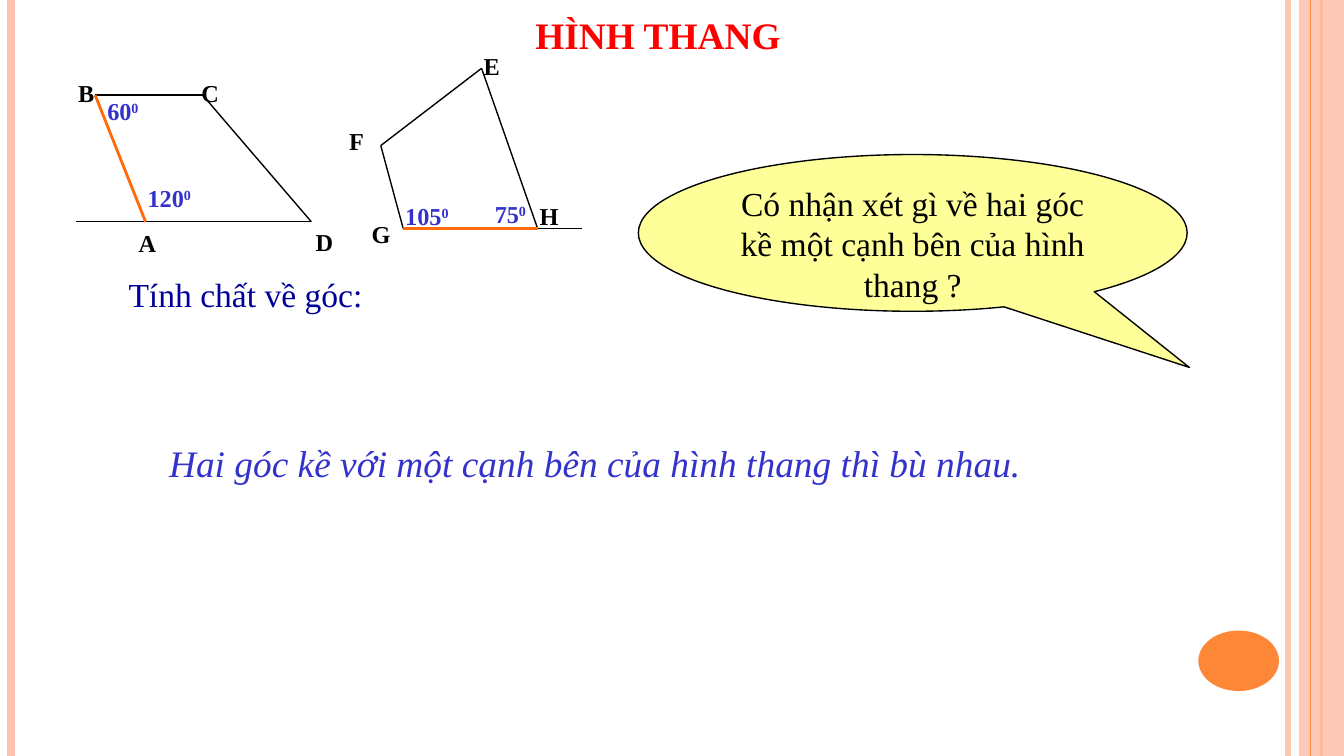
import pptx
import pptx.dml.color
import pptx.enum.shapes
import pptx.enum.text
import pptx.oxml.ns
import pptx.util
import lxml.etree

THEME = {
    "font": "Times New Roman",
    "black": "000000", "red": "FF0000", "blue": "3333CC", "navy": "000099",
    "peach": "FEC3AE", "orange": "FE8637", "side": "FF6B0A", "cream": "FFFF99",
    "label": 13, "body": 18, "head": 20,
    "thin": 0.75, "bold": 1.5,
}

deck = pptx.Presentation()
deck.slide_width = pptx.util.Inches(10)
deck.slide_height = pptx.util.Inches(5.625)
slide = deck.slides.add_slide(deck.slide_layouts[5])
shapes = slide.shapes
kinds = pptx.enum.shapes.MSO_SHAPE
aligns = pptx.enum.text.PP_ALIGN
color = pptx.dml.color.RGBColor.from_string
name = pptx.oxml.ns.qn

unit = deck.slide_width / 120
wide = 120
high = deck.slide_height / unit


def line(start, end, tint="black", width=THEME["thin"]):
    ends = [round(n * unit) for n in (*start, *end)]
    edge = shapes.add_connector(pptx.enum.shapes.MSO_CONNECTOR.STRAIGHT, *ends)
    edge.line.color.rgb = color(THEME[tint])
    edge.line.width = pptx.util.Pt(width)
    lxml.etree.SubElement(edge._element.spPr, name("a:effectLst"))
    return edge


def text(words, box, shape=None, size="label", tint="black", bold=False,
         slant=False, power="", align=aligns.LEFT, wrap=True, left=1.2, top=0.6):
    if shape is None:
        shape = shapes.add_textbox(0, 0, 0, 0)
    shape.left, shape.top, shape.width, shape.height = [round(n * unit) for n in box]
    frame = shape.text_frame
    frame.auto_size = pptx.enum.text.MSO_AUTO_SIZE.NONE
    frame.word_wrap = wrap
    frame.vertical_anchor = pptx.enum.text.MSO_ANCHOR.TOP
    frame.margin_left = round(left * unit)
    frame.margin_right = round(1.1 * unit)
    frame.margin_top = frame.margin_bottom = round(top * unit)
    para = frame.paragraphs[0]
    para.alignment = align
    for part in filter(None, (words, power)):
        run = para.add_run()
        run.text = part
        run.font.name = THEME["font"]
        run.font.size = pptx.util.Pt(THEME[size])
        run.font.bold = bold
        run.font.italic = slant
        run.font.color.rgb = color(THEME[tint])
    if power:
        run._r.get_or_add_rPr().set("baseline", "30000")


rail = line((115, 0), (115, high), "peach", 3)
line((1, 0), (1, high), "peach", 4.5)
line((118, 0), (118, high), "orange", THEME["bold"])
band = shapes.add_shape(kinds.RECTANGLE, *[round(n * unit) for n in (116, 0, 4, high)])
line((117, 0), (117, high), "orange")
dot = shapes.add_shape(kinds.OVAL, *[round(n * unit) for n in (107, 56.3, 7.2, 5.4)])
cloud = shapes.add_shape(kinds.OVAL_CALLOUT, *[round(n * unit) for n in (57, 13.8, 49, 14)])

for shape, tint in ((band, "peach"), (dot, "orange"), (cloud, "cream")):
    shape.shadow.inherit = False
    shape.fill.solid()
    shape.fill.fore_color.rgb = color(THEME[tint])
    shape.line.fill.background()
cloud.line.color.rgb = color(THEME["black"])
cloud.line.width = pptx.util.Pt(THEME["thin"])
cloud.adjustments[0] = 0.504
cloud.adjustments[1] = 0.858

for shape, share in ((rail, 93), (band, 87)):
    tone = next(shape._element.spPr.iter(name("a:srgbClr")))
    lxml.etree.SubElement(tone, name("a:alpha")).set("val", str(share * 1000))

spots = {
    "A": (13, 19.8), "B": (8.5, 8.5), "C": (18.1, 8.5), "D": (27.8, 19.8),
    "E": (43, 6.1), "F": (34, 13), "G": (36, 20.4), "H": (48, 20.4),
}
for start, end in ("BC", "AB", "CD", "GF", "FE", "EH"):
    line(spots[start], spots[end])
line((6.8, 19.8), spots["D"])
line(spots["G"], (52, 20.4))
for start, end in ("AB", "HG"):
    line(spots[start], spots[end], "side", THEME["bold"])

for words, x, y in (
    ("A", 11.2, 19.8), ("B", 5.8, 6.4), ("C", 16.8, 6.4), ("D", 27, 19.7),
    ("E", 42, 4), ("F", 30, 10.7), ("G", 32, 19), ("H", 47, 17.4),
):
    text(words, (x, y, 6, 3.8), bold=True)

for words, x, y, width in (
    ("60", 8.4, 8, 6), ("120", 12, 15.8, 7.7),
    ("105", 35, 17.4, 10), ("75", 43, 17.2, 6),
):
    text(words, (x, y, width, 3.8), tint="blue", bold=True, power="0")

text("HÌNH THANG", (41, 0.6, 46, 5.2), shapes.title, size="head",
     tint="red", bold=True, left=6.8, top=0.5)
text("Có nhận xét gì về hai góc kề một cạnh bên của hình thang ?",
     (57, 13.8, 49, 14), cloud, size="body", align=aligns.CENTER, left=1.1, top=0.5)
text("Tính chất về góc:", (10.3, 23.9, 23.5, 4.8), size="body", tint="navy", wrap=False)
text("Hai góc kề với một cạnh bên của hình thang thì bù nhau.",
     (14, 38.8, 90, 5.2), size="head", tint="blue", slant=True, left=1.1, top=0.5)

deck.save("out.pptx")
